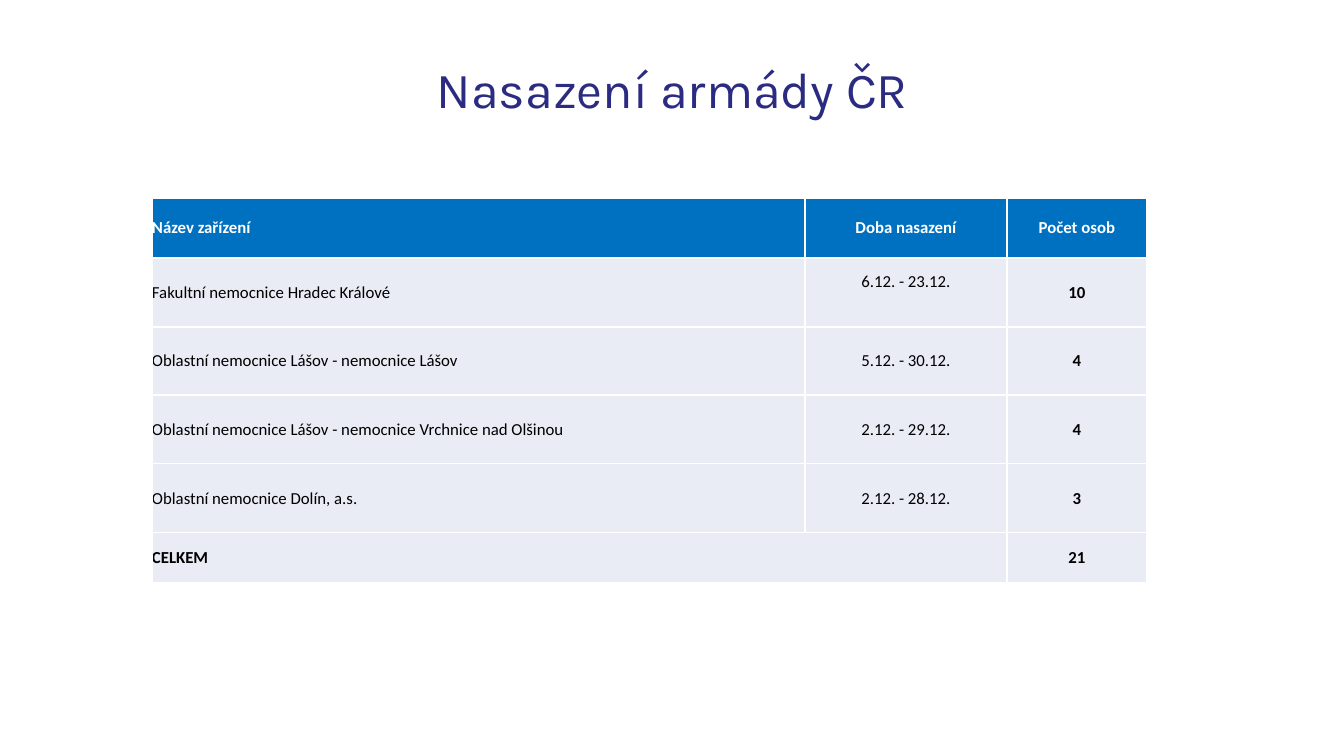
from lxml.etree import SubElement
from pptx import Presentation
from pptx.dml.color import RGBColor
from pptx.enum.text import MSO_ANCHOR as Anchor, PP_ALIGN as Align
from pptx.oxml.ns import qn
from pptx.util import Pt

# Content
TITLE = "Nasazení armády ČR"
ROWS = [
    ("Název zařízení", "Doba nasazení", "Počet osob"),
    ("Fakultní nemocnice Hradec Králové", "6.12. - 23.12.", "10"),
    ("Oblastní nemocnice Lášov - nemocnice Lášov", "5.12. - 30.12.", "4"),
    ("Oblastní nemocnice Lášov - nemocnice Vrchnice nad Olšinou",
     "2.12. - 29.12.", "4"),
    ("Oblastní nemocnice Dolín, a.s.", "2.12. - 28.12.", "3"),
    ("CELKEM", "", "21"),
]

# Layout in px
SCALE = 914400 / 100.8
SIZE = (1344, 756)
TITLE_BOX = (93, 40, 1159, 105)
TABLE_AT = (152, 198)
WIDTHS = (653, 202, 140)
HEIGHTS = (60, 69, 68, 69, 69, 50)
LIFT = {(1, 1): 22}  # bottom margin that raises the first date

# Formats
TITLE_FONT = dict(name="Karla", size=Pt(36), bold=False)
CELL_FONT = dict(name="Calibri", size=Pt(12))
NAVY, BLUE, PALE = "2B2B82", "0070C0", "E9EBF5"
WHITE, BLACK = "FFFFFF", "000000"


def px(n):
    return round(n * SCALE)


def color(code):
    return RGBColor.from_string(code)


def style(item, values):
    for key, value in values.items():
        setattr(item, key, value)


def write(para, text, look, ink, align):
    run = para.add_run()
    run.text = text
    style(run.font, look)
    run.font.color.rgb = color(ink)
    para.alignment = align


def edge(cell):
    props = cell._tc.get_or_add_tcPr()
    for i, side in enumerate(("lnL", "lnR", "lnT", "lnB")):
        line = props.makeelement(qn("a:" + side), {"w": str(Pt(1))})
        fill = SubElement(line, qn("a:solidFill"))
        SubElement(fill, qn("a:srgbClr"), val=WHITE)
        props.insert(i, line)


deck = Presentation()
deck.slide_width, deck.slide_height = map(px, SIZE)
slide = deck.slides.add_slide(deck.slide_layouts[6])

# Title
frame = slide.shapes.add_textbox(*map(px, TITLE_BOX)).text_frame
style(frame, dict(word_wrap=True, vertical_anchor=Anchor.MIDDLE))
head = frame.paragraphs[0]
head.line_spacing = 0.9
write(head, TITLE, TITLE_FONT, NAVY, Align.CENTER)

# Table
area = (*TABLE_AT, sum(WIDTHS), sum(HEIGHTS))
table = slide.shapes.add_table(
    len(ROWS), len(WIDTHS), *map(px, area)).table
for col, wide in zip(table.columns, WIDTHS):
    col.width = px(wide)
for row, high in zip(table.rows, HEIGHTS):
    row.height = px(high)

last = len(ROWS) - 1
for r, row in enumerate(ROWS):
    for c, text in enumerate(row):
        cell = table.cell(r, c)
        style(cell, dict(
            margin_left=0, margin_right=0, margin_top=0,
            margin_bottom=px(LIFT.get((r, c), 0)),
            vertical_anchor=Anchor.MIDDLE))
        cell.fill.solid()
        cell.fill.fore_color.rgb = color(PALE if r else BLUE)
        edge(cell)
        if text:
            look = dict(CELL_FONT, bold=r in (0, last) or c == 2)
            write(cell.text_frame.paragraphs[0], text, look,
                  BLACK if r else WHITE, Align.CENTER if c else Align.LEFT)
table.cell(last, 0).merge(table.cell(last, 1))

deck.save("out.pptx")
